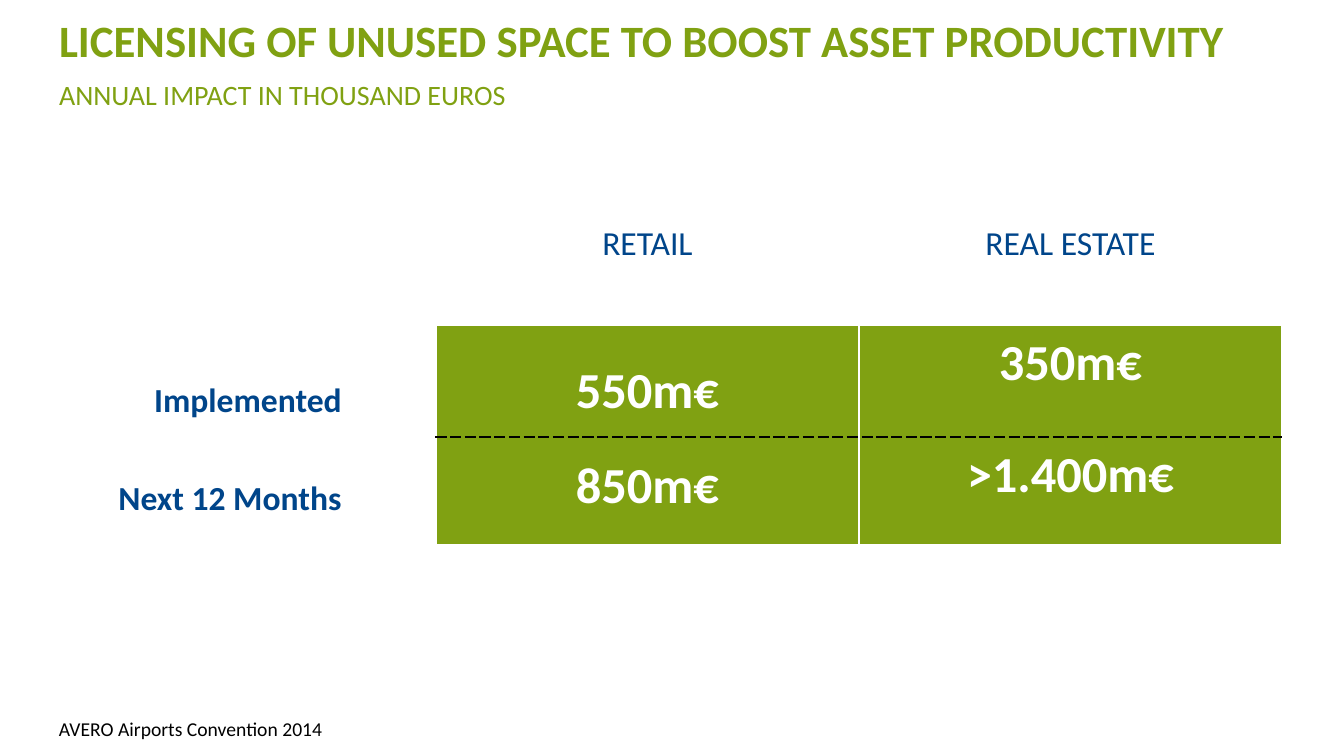
"""Build the slide on the annual impact of licensing unused space."""
from lxml.etree import SubElement
from pptx import Presentation
from pptx.dml.color import RGBColor
from pptx.enum.text import MSO_ANCHOR, MSO_AUTO_SIZE, PP_ALIGN
from pptx.oxml.ns import qn
from pptx.util import Pt

PX = 914400 / 100.8
GREEN, BLUE, WHITE, BLACK = "80A112", "00458A", "FFFFFF", "000000"
HEADERS = ["", "RETAIL", "REAL ESTATE"]
VALUES = [["", "550m€", "350m€"], ["", "850m€", ">1.400m€"]]
ROW_HEIGHTS = [108, 112, 108]
RETAIL_TOPS = [35, 18]


def px(*lengths):
    """Turn pixel lengths into EMU."""
    return [round(n * PX) for n in lengths]


def rgb(color):
    """Turn a hex string into a colour."""
    return RGBColor.from_string(color)


def set_font(p, size, color, bold=False):
    """Set the font of a paragraph."""
    p.font.name, p.font.size, p.font.bold = "Calibri", Pt(size), bold
    p.font.color.rgb = rgb(color)


def add_title(slide, box, title, subtitle):
    """Place the title and its subtitle line."""
    sp = slide.shapes.title
    sp.left, sp.top, sp.width, sp.height = px(*box)
    tf = sp.text_frame
    tf.auto_size, tf.vertical_anchor = MSO_AUTO_SIZE.NONE, MSO_ANCHOR.TOP
    tf.text = f"{title}\n{subtitle}"
    for p, size, bold, gap in zip(tf.paragraphs, (32, 20), (True, False), (0, 10)):
        p.alignment, p.line_spacing, p.space_before = PP_ALIGN.LEFT, 0.9, Pt(gap)
        set_font(p, size, GREEN, bold)


def add_text(slide, box, text, size, color, bold=False, wrap=False,
             align=PP_ALIGN.CENTER, anchor=MSO_ANCHOR.TOP):
    """Add a one-line text box."""
    tf = slide.shapes.add_textbox(*px(*box)).text_frame
    tf.word_wrap, tf.vertical_anchor = wrap, anchor
    p = tf.paragraphs[0]
    p.text, p.alignment = text, align
    set_font(p, size, color, bold)


def set_border(cell, side, color, dash="solid"):
    """Draw one side (L, R, T or B) of a cell."""
    tcPr = cell._tc.get_or_add_tcPr()
    ln = SubElement(tcPr, qn(f"a:ln{side}"), w=str(Pt(1)))
    fill = SubElement(ln, qn("a:solidFill"))
    SubElement(fill, qn("a:srgbClr"), val=color)
    SubElement(ln, qn("a:prstDash"), val=dash)


def fill_cell(cell, text, size, color, fill, bold=False, top=7, dashed=""):
    """Write and format a table cell, with a dashed line on one side."""
    for side in "LRTB":
        if side == dashed:
            set_border(cell, side, BLACK, "dash")
        else:
            set_border(cell, side, WHITE)
    cell.fill.solid()
    cell.fill.fore_color.rgb = rgb(fill)
    cell.margin_left, cell.margin_right, cell.margin_top, cell.margin_bottom = px(14, 14, top, 7)
    p = cell.text_frame.paragraphs[0]
    p.text, p.alignment = text, PP_ALIGN.CENTER
    set_font(p, size, color, bold)


def add_impact_table(slide, left, top, col_width):
    """Add the table of impacts by business and period."""
    box = px(left, top, col_width * len(HEADERS), sum(ROW_HEIGHTS))
    table = slide.shapes.add_table(len(ROW_HEIGHTS), len(HEADERS), *box).table
    table.first_row = table.horz_banding = False
    for row, height in zip(table.rows, px(*ROW_HEIGHTS)):
        row.height = height
    for c, header in enumerate(HEADERS):
        table.columns[c].width = px(col_width)[0]
        fill_cell(table.cell(0, c), header, 24, BLUE, WHITE)
        for r, values in enumerate(VALUES):
            fill_cell(table.cell(r + 1, c), values[c], 36, WHITE,
                      GREEN if c else WHITE, True,
                      RETAIL_TOPS[r] if c == 1 else 7, "BT"[r] if c else "")


def main():
    """Build and save the slide."""
    prs = Presentation()
    prs.slide_width, prs.slide_height = px(1344, 756)
    slide = prs.slides.add_slide(prs.slide_layouts[5])
    add_title(slide, (49, 14, 1271, 46),
              "LICENSING OF UNUSED SPACE TO BOOST ASSET PRODUCTIVITY",
              "ANNUAL IMPACT IN THOUSAND EUROS")
    add_text(slide, (49, 712, 454, 34), "AVERO Airports Convention 2014", 14, BLACK,
             wrap=True, align=PP_ALIGN.LEFT, anchor=MSO_ANCHOR.MIDDLE)
    add_impact_table(slide, 13, 217, 423)
    add_text(slide, (143, 374, 210, 50), "Implemented", 24, BLUE, True)
    add_text(slide, (107, 472, 246, 50), "Next 12 Months", 24, BLUE, True)
    prs.save("out.pptx")


if __name__ == "__main__":
    main()
